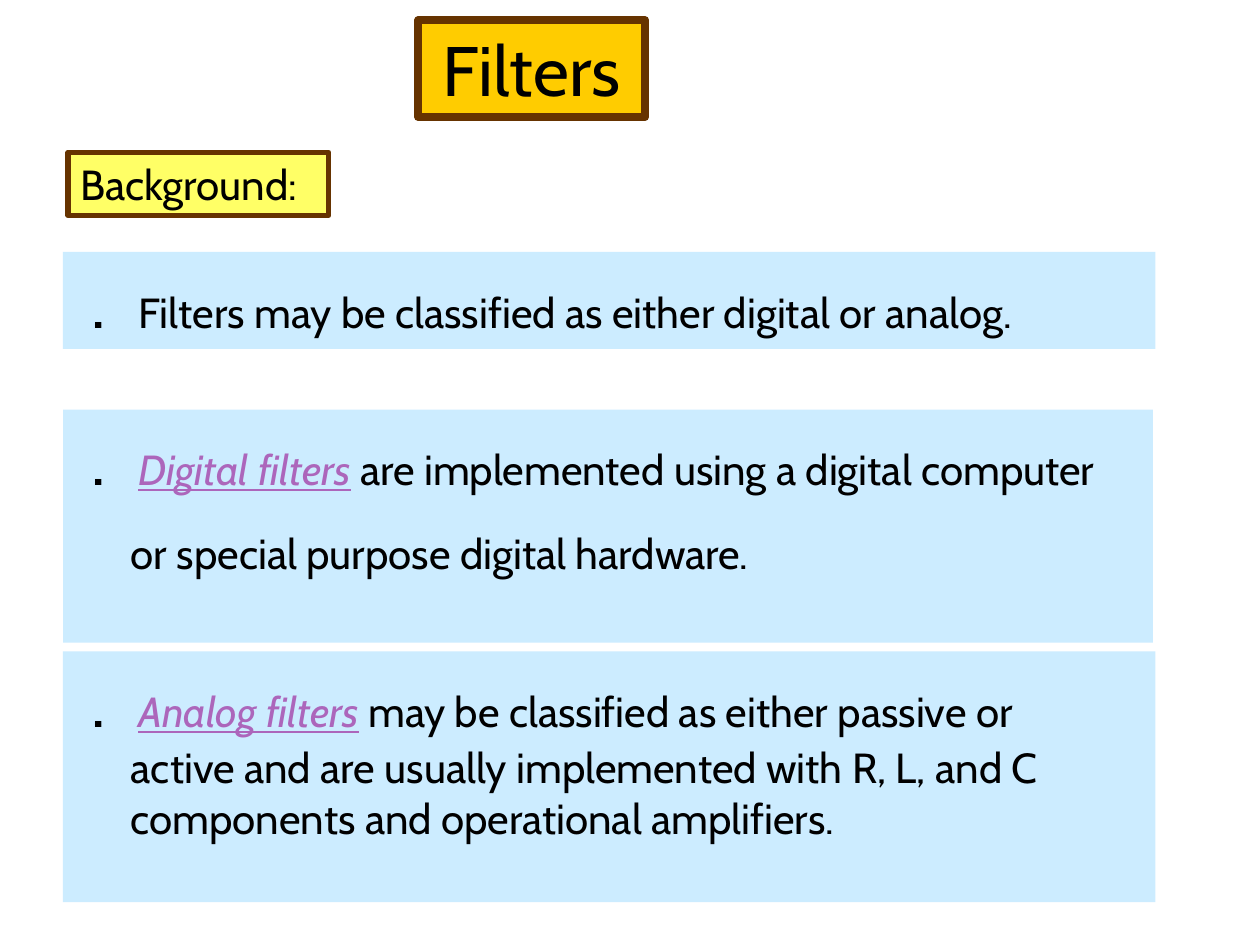
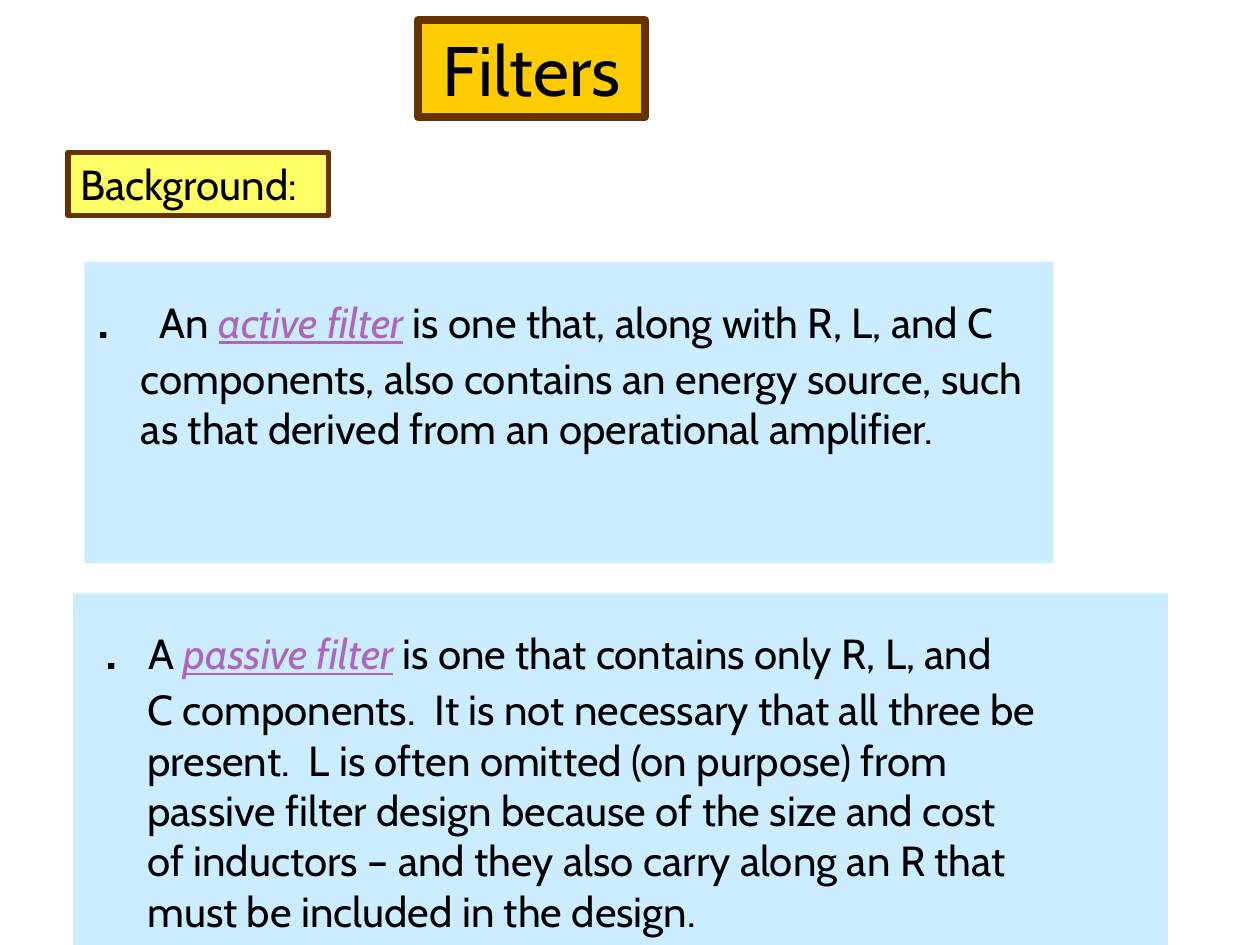
from lxml import etree
from pptx import Presentation
from pptx.dml.color import RGBColor
from pptx.enum.shapes import MSO_SHAPE
from pptx.enum.text import MSO_ANCHOR, PP_ALIGN
from pptx.oxml.ns import qn
from pptx.util import Inches, Pt

RECTANGLE = MSO_SHAPE.RECTANGLE
TOP = MSO_ANCHOR.TOP
LEFT, CENTER = PP_ALIGN.LEFT, PP_ALIGN.CENTER

FONT = "Cabin"
BLACK, BROWN, TERM_PURPLE = "000000", "663300", "AC66BB"
GOLD, YELLOW, PALE_BLUE = "FFCC00", "FFFF66", "CCECFF"
LARGE, BODY = 40, 24


def rgb(value):
    """Turn a hex string into a colour."""
    return RGBColor.from_string(value)


def add_box(slide, box, fill, border=0):
    """Add a filled rectangle and return its text frame."""
    panel = slide.shapes.add_shape(RECTANGLE, *map(Inches, box))
    panel.shadow.inherit = False
    panel.fill.solid()
    panel.fill.fore_color.rgb = rgb(fill)
    if border:
        panel.line.color.rgb = rgb(BROWN)
        panel.line.width = Pt(border)
    else:
        panel.line.fill.background()
    frame = panel.text_frame
    frame.word_wrap = True
    frame.vertical_anchor = TOP
    return frame


def style(run, size, colour=BLACK):
    """Apply the shared typeface with a size and colour."""
    run.font.name = FONT
    run.font.size = Pt(size)
    run.font.color.rgb = rgb(colour)


def add_label(slide, box, text, fill, border, size, align):
    """Add a bordered one-line label."""
    frame = add_box(slide, box, fill, border)
    frame.text = text
    frame.paragraphs[0].alignment = align
    style(frame.paragraphs[0].runs[0], size)


def set_dot_tab(paragraph, dot_at, text_at):
    """Indent the leading dot and put a tab stop where the text begins."""
    properties = paragraph._p.get_or_add_pPr()
    properties.set("marL", "0")
    properties.set("indent", str(Inches(dot_at)))
    stops = etree.SubElement(properties, qn("a:tabLst"))
    etree.SubElement(stops, qn("a:tab"), pos=str(Inches(text_at)), algn="l")


def add_statement(slide, box, dot_at, text_at, opening, lines=(), gap=0):
    """Add a blue panel with a dotted opening line and indented lines below."""
    frame = add_box(slide, box, PALE_BLUE)
    first = frame.paragraphs[0]
    first.alignment = LEFT
    set_dot_tab(first, dot_at, text_at)
    dot = first.add_run()
    dot.text = ".\t"
    style(dot, LARGE)
    before, term, after = opening
    for text in filter(None, opening):
        run = first.add_run()
        run.text = text
        style(run, BODY, TERM_PURPLE if text == term else BLACK)
        if text == term:
            run.font.italic = run.font.underline = True
    for line in lines:
        paragraph = frame.add_paragraph()
        paragraph.text = line
        paragraph.alignment = LEFT
        paragraph.space_before = Pt(gap)
        paragraph._p.get_or_add_pPr().set("marL", str(Inches(text_at)))
        style(paragraph.runs[0], BODY)


def add_background_slide(deck, statements):
    """Add a slide with the shared title and heading above its statements."""
    slide = deck.slides.add_slide(deck.slide_layouts[6])
    add_label(slide, (3.32, 0.16, 1.8, 0.77), "Filters", GOLD, 4.5, LARGE, CENTER)
    add_label(slide, (0.54, 1.21, 2.07, 0.5), "Background:", YELLOW, 3, BODY, LEFT)
    for statement in statements:
        add_statement(slide, **statement)


FILTER_CLASSES = [
    dict(box=(0.5, 2, 8.67, 0.77), dot_at=0.13, text_at=0.45,
         opening=("Filters may be classified as either digital or analog.", "", "")),
    dict(box=(0.5, 3.25, 8.65, 1.85), dot_at=0.13, text_at=0.44,
         opening=("", "Digital filters", " are implemented using a digital computer"),
         lines=["or special purpose digital hardware."], gap=16),
    dict(box=(0.5, 5.17, 8.67, 1.99), dot_at=0.13, text_at=0.44,
         opening=("", "Analog filters", " may be classified as either passive or"),
         lines=["active and are usually implemented with R, L, and C",
                "components and operational amplifiers."]),
]

ACTIVE_AND_PASSIVE = [
    dict(box=(0.67, 2.08, 7.69, 2.39), dot_at=0, text_at=0.35,
         opening=("An ", "active filter", " is one that, along with R, L, and C"),
         lines=["components, also contains an energy source, such",
                "as that derived from an operational amplifier."]),
    dict(box=(0.58, 4.71, 8.69, 2.79), dot_at=0.15, text_at=0.49,
         opening=("A ", "passive filter", " is one that contains only R, L, and"),
         lines=["C components.  It is not necessary that all three be",
                "present.  L is often omitted (on purpose) from",
                "passive filter design because of the size and cost",
                "of inductors – and they also carry along an R that",
                "must be included in the design."]),
]


def main():
    """Build and save both slides."""
    deck = Presentation()
    deck.slide_width, deck.slide_height = Inches(10), Inches(7.5)
    for statements in (FILTER_CLASSES, ACTIVE_AND_PASSIVE):
        add_background_slide(deck, statements)
    deck.save("out.pptx")


if __name__ == "__main__":
    main()
